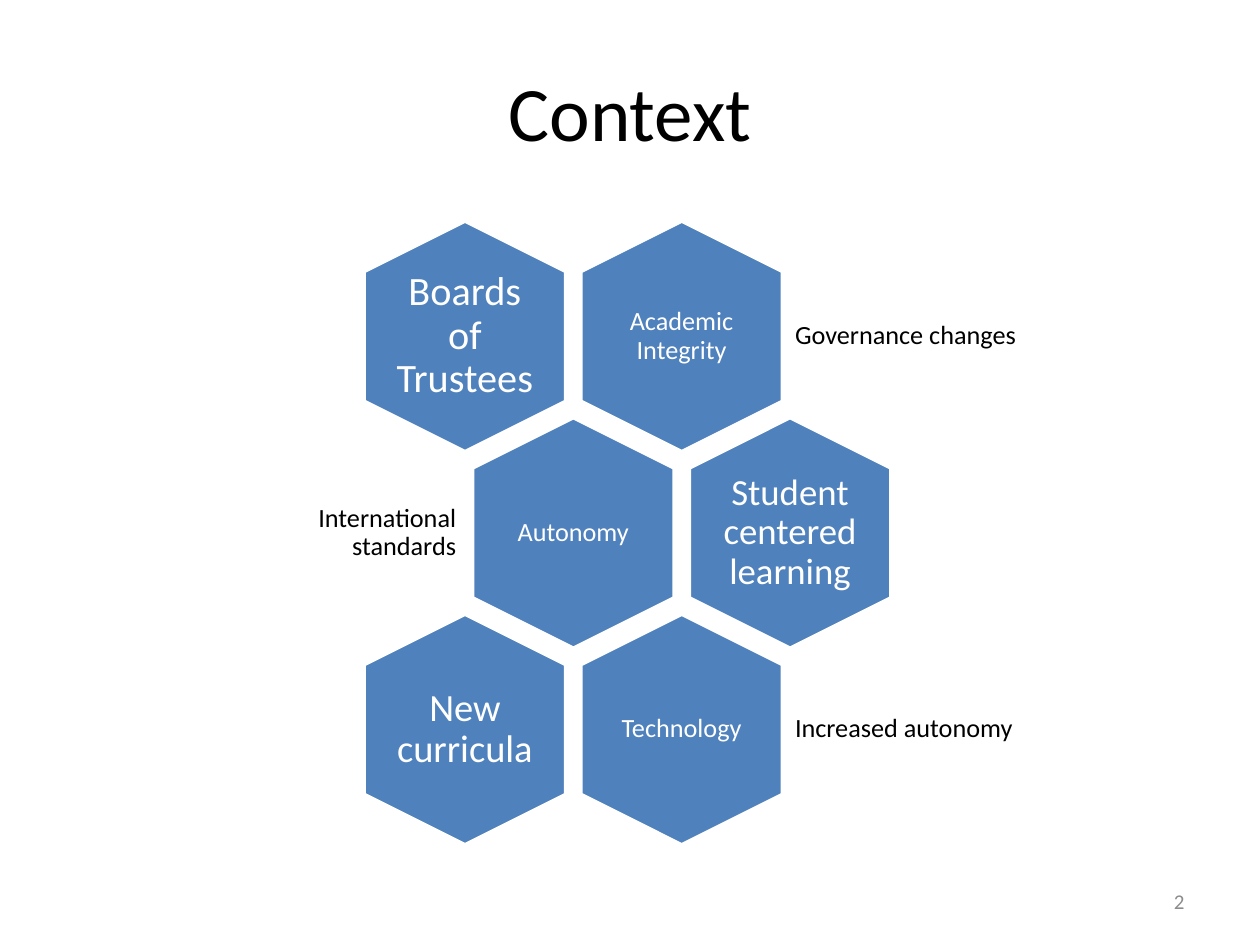
from pptx import Presentation
from pptx.dml.color import RGBColor
from pptx.enum.shapes import MSO_SHAPE
from pptx.enum.text import MSO_ANCHOR, PP_ALIGN
from pptx.util import Inches, Pt

HEXAGON = MSO_SHAPE.HEXAGON
MIDDLE = MSO_ANCHOR.MIDDLE
LEFT, CENTER, RIGHT = PP_ALIGN.LEFT, PP_ALIGN.CENTER, PP_ALIGN.RIGHT

BLACK = RGBColor(0x00, 0x00, 0x00)
WHITE = RGBColor(0xFF, 0xFF, 0xFF)
BLUE = RGBColor(0x4F, 0x81, 0xBD)
GRAY = RGBColor(0x8C, 0x8C, 0x8C)
FONT = "Calibri"

HEXAGON_LENGTH, HEXAGON_WIDTH = 1.83, 1.6
FIRST_X, FIRST_Y = 3.69, 2.67
COLUMN_STEP, ROW_STEP = 1.72, 1.56
TEXT_WIDTH, TEXT_HEIGHT = 1.1, 1.26
LABEL_HEIGHT = 1.1
LABEL_SIZE = 15
LABEL_MARGIN = 0.06

# Row, column, text, size, text margin
HEXAGONS = [
    (0, 1, "Academic Integrity", LABEL_SIZE, LABEL_MARGIN),
    (0, 0, "Boards of Trustees", 23, 0),
    (1, 0, "Autonomy", LABEL_SIZE, LABEL_MARGIN),
    (1, 1, "Student centered learning", 21, 0),
    (2, 1, "Technology", LABEL_SIZE, LABEL_MARGIN),
    (2, 0, "New curricula", 22, 0),
]

# Row, left, width, text, alignment
SIDE_LABELS = [
    (0, 6.25, 2.05, "Governance changes", LEFT),
    (1, 1.7, 1.98, "International standards", RIGHT),
    (2, 6.25, 2.05, "Increased autonomy", LEFT),
]


def row_center(row):
    return FIRST_Y + row * ROW_STEP


def column_center(row, column):
    """Odd rows are shifted right by half a column."""
    return FIRST_X + (column + row % 2 / 2) * COLUMN_STEP


def add_text(slide, box, text, size, color, alignment, margin=None, spacing=None):
    shape = slide.shapes.add_textbox(*(Inches(length) for length in box))
    frame = shape.text_frame
    frame.text = text
    frame.word_wrap = True
    frame.vertical_anchor = MIDDLE
    if margin is not None:
        frame.margin_left = frame.margin_right = Inches(margin)
        frame.margin_top = frame.margin_bottom = Inches(margin)
    paragraph = frame.paragraphs[0]
    paragraph.alignment = alignment
    paragraph.line_spacing = spacing
    font = paragraph.runs[0].font
    font.name = FONT
    font.size = Pt(size)
    font.color.rgb = color


def add_hexagon(slide, row, column, text, size, margin):
    """Add an upright hexagon with a level text box over it."""
    x, y = column_center(row, column), row_center(row)
    shape = slide.shapes.add_shape(
        HEXAGON,
        Inches(x - HEXAGON_LENGTH / 2), Inches(y - HEXAGON_WIDTH / 2),
        Inches(HEXAGON_LENGTH), Inches(HEXAGON_WIDTH),
    )
    shape.rotation = 90
    shape.adjustments[0] = 0.25
    shape.shadow.inherit = False
    shape.fill.solid()
    shape.fill.fore_color.rgb = BLUE
    shape.line.color.rgb = WHITE
    shape.line.width = Pt(2)
    box = (x - TEXT_WIDTH / 2, y - TEXT_HEIGHT / 2, TEXT_WIDTH, TEXT_HEIGHT)
    add_text(slide, box, text, size, WHITE, CENTER, margin, 0.9)


def add_side_label(slide, row, left, width, text, alignment):
    box = (left, row_center(row) - LABEL_HEIGHT / 2, width, LABEL_HEIGHT)
    add_text(slide, box, text, LABEL_SIZE, BLACK, alignment, LABEL_MARGIN, 0.9)


def main():
    presentation = Presentation()
    presentation.slide_width = Inches(10)
    presentation.slide_height = Inches(7.5)
    slide = presentation.slides.add_slide(presentation.slide_layouts[6])

    add_text(slide, (0.5, 0.25, 9, 1.25), "Context", 44, BLACK, CENTER)
    for hexagon in HEXAGONS:
        add_hexagon(slide, *hexagon)
    for label in SIDE_LABELS:
        add_side_label(slide, *label)
    add_text(slide, (7.17, 6.95, 2.33, 0.4), "2", 12, GRAY, RIGHT)

    presentation.save("out.pptx")


if __name__ == "__main__":
    main()
